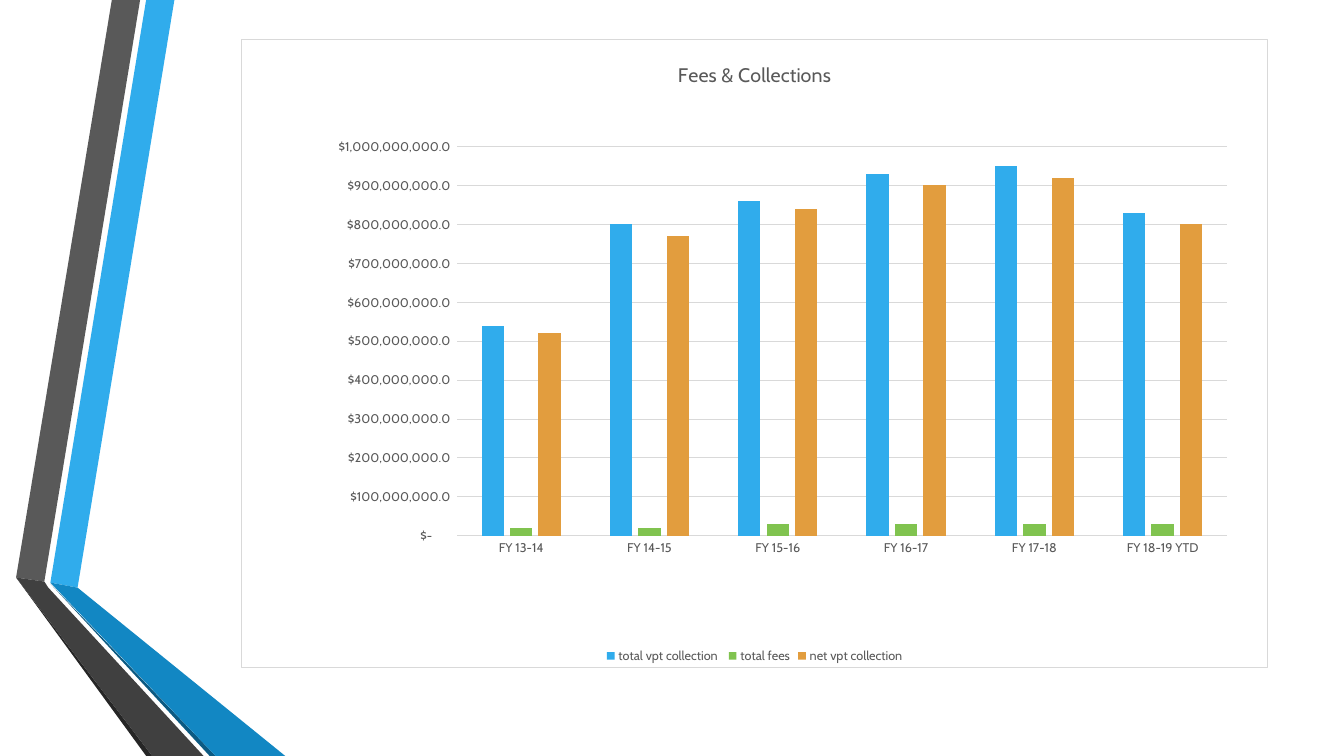
from lxml import etree
from pptx import Presentation
from pptx.chart.data import CategoryChartData as Data
from pptx.dml.color import RGBColor
from pptx.enum.chart import XL_CHART_TYPE as Kind, XL_LEGEND_POSITION as Spot, XL_TICK_MARK as Tick
from pptx.oxml import parse_xml
from pptx.oxml.ns import nsdecls, qn
from pptx.util import Pt

PX = 9144
FACE = "Cabin"
GREY = "595959"
RULE = "D9D9D9"
MONEY = '_("$"* #,##0.0_);_("$"* \\(#,##0.0\\);_("$"* "-"??_);_(@_)'
YEARS = ["FY 13-14", "FY 14-15", "FY 15-16", "FY 16-17", "FY 17-18", "FY 18-19 YTD"]
MILLION = 1000000
SERIES = [
    ("total vpt collection ", "30ACEC", [540, 800, 860, 930, 950, 830]),
    ("total fees", "80C34F", [20, 20, 30, 30, 30, 30]),
    ("net vpt collection", "E29D3E", [520, 770, 840, 900, 920, 800]),
]
BANDS = [
    ("30ACEC", [(34, 578), (61, 583), (157, 0), (129, 0)]),
    (GREY, [(123, 0), (95, 0), (0, 573), (28, 577)]),
    ("262626", [(0, 573), (129, 750), (135, 750)]),
    ("0C5A82", [(34, 579), (192, 750), (198, 750)]),
    ("1287C3", [(34, 578), (198, 750), (267, 750), (61, 583)]),
    ("404040", [(186, 750), (32, 583), (28, 577), (0, 573), (135, 750)]),
]
PLOT = {"x": 0.21, "y": 0.17, "w": 0.75, "h": 0.62}


def tint(code):
    return RGBColor.from_string(code)


def style(font, size, color=GREY):
    font.size = Pt(size)
    font.bold = False
    font.name = FACE
    font.color.rgb = tint(color)


def rule(line):
    line.color.rgb = tint(RULE)
    line.width = Pt(0.75)


def ribbon(slide, box):
    left, top = box
    for color, points in BANDS:
        spots = [(left + x, top + y) for x, y in points]
        pen = slide.shapes.build_freeform(*spots[0], scale=PX)
        pen.add_line_segments(spots[1:], close=True)
        band = pen.convert_to_shape()
        band.shadow.inherit = False
        band.fill.solid()
        band.fill.fore_color.rgb = tint(color)
        band.line.fill.background()


def frame(chart):
    space = chart.element
    space.find(qn("c:chart")).addnext(parse_xml(
        f'<c:spPr {nsdecls("c", "a")}>'
        '<a:solidFill><a:srgbClr val="FFFFFF"/></a:solidFill>'
        f'<a:ln w="9525"><a:solidFill><a:srgbClr val="{RULE}"/></a:solidFill></a:ln>'
        '</c:spPr>'))
    area = space.find(".//" + qn("c:plotArea"))
    for old in area.findall(qn("c:layout")):
        area.remove(old)
    layout = etree.Element(qn("c:layout"))
    manual = etree.SubElement(layout, qn("c:manualLayout"))
    rows = [("layoutTarget", "inner"), ("xMode", "edge"), ("yMode", "edge")]
    for tag, val in rows + list(PLOT.items()):
        etree.SubElement(manual, qn("c:" + tag)).set("val", str(val))
    area.insert(0, layout)


def graph(slide, box):
    data = Data(number_format=MONEY)
    data.categories = YEARS
    for name, color, vals in SERIES:
        data.add_series(name, [val * MILLION for val in vals])
    place = [side * PX for side in box]
    chart = slide.shapes.add_chart(Kind.COLUMN_CLUSTERED, *place, data).chart
    style(chart.font, 10, "000000")
    chart.has_title = True
    title = chart.chart_title
    title.include_in_layout = False
    title.text_frame.text = "Fees & Collections"
    style(title.text_frame.paragraphs[0].font, 14)
    chart.has_legend = True
    chart.legend.position = Spot.BOTTOM
    chart.legend.include_in_layout = False
    style(chart.legend.font, 9)

    plot = chart.plots[0]
    plot.gap_width = 219
    plot.overlap = -27
    plot.vary_by_categories = False
    for bars, (name, color, vals) in zip(plot.series, SERIES):
        bars.format.fill.solid()
        bars.format.fill.fore_color.rgb = tint(color)
        bars.invert_if_negative = False

    for axis in (chart.category_axis, chart.value_axis):
        axis.major_tick_mark = axis.minor_tick_mark = Tick.NONE
        style(axis.tick_labels.font, 9)
    rule(chart.category_axis.format.line)
    scale = chart.value_axis
    scale.minimum_scale = 0
    scale.maximum_scale = 1000 * MILLION
    scale.major_unit = 100 * MILLION
    scale.format.line.fill.background()
    rule(scale.major_gridlines.format.line)
    scale.tick_labels.number_format = MONEY
    scale.tick_labels.number_format_is_linked = False
    frame(chart)


def main():
    deck = Presentation()
    deck.slide_width = 1333 * PX
    deck.slide_height = 750 * PX
    slide = deck.slides.add_slide(deck.slide_layouts[6])
    ribbon(slide, (16, 0))
    graph(slide, (239, 39, 1019, 624))
    deck.save("out.pptx")


if __name__ == "__main__":
    main()
